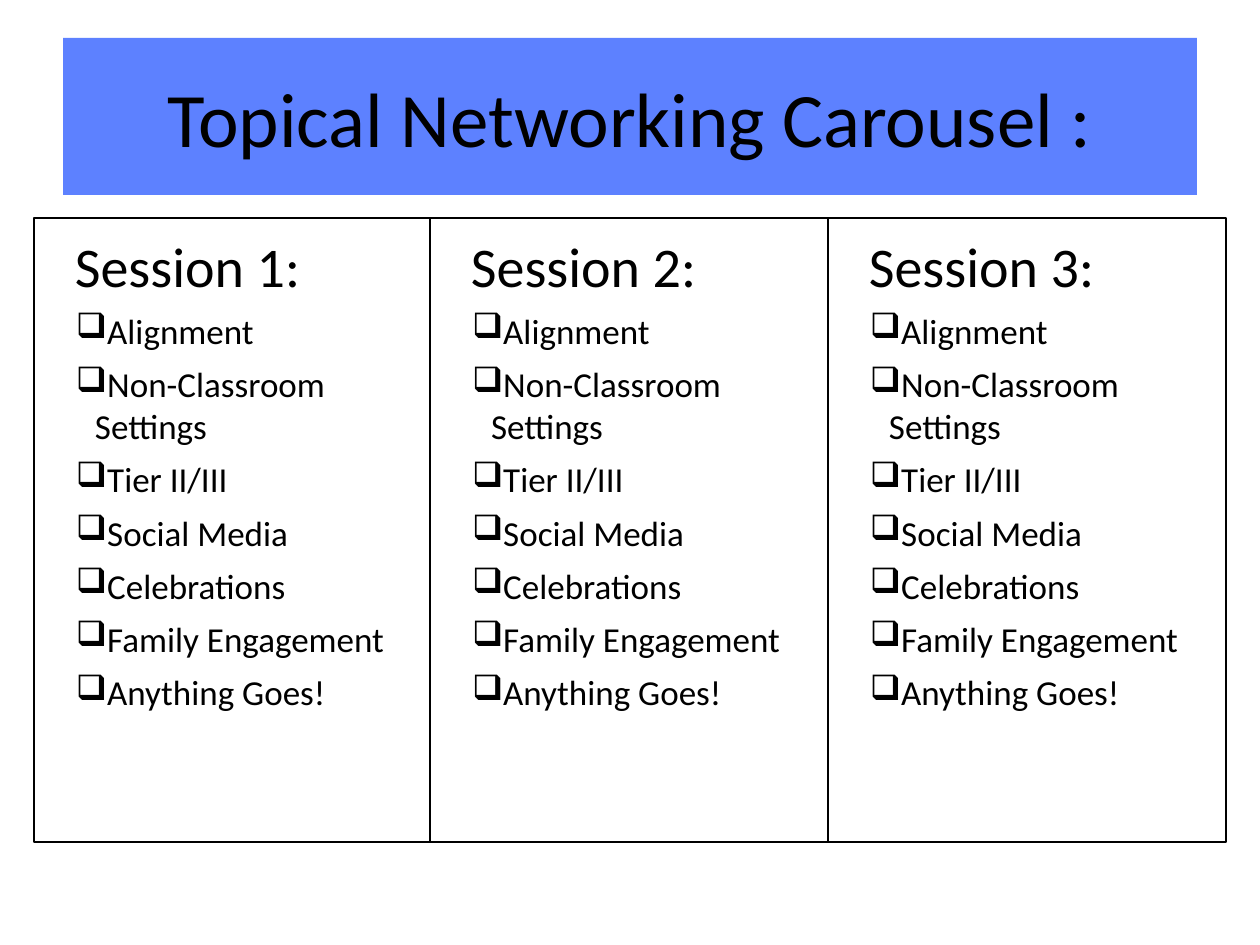
from lxml import etree
from pptx import Presentation
from pptx.dml.color import RGBColor
from pptx.enum.text import MSO_ANCHOR, PP_ALIGN
from pptx.oxml.ns import qn
from pptx.util import Pt

MIDDLE, TOP = MSO_ANCHOR.MIDDLE, MSO_ANCHOR.TOP
CENTER, LEFT = PP_ALIGN.CENTER, PP_ALIGN.LEFT
COLORS = {"banner": "5D81FF", "ink": "000000"}
FONT = "Calibri"
TITLE_ONLY = 5
INSET = 13
COLUMN_TOP, COLUMN_HEIGHT = 218, 624
COLUMN_WIDTHS = [396, 398, 398]
TOPICS = [
    "Alignment",
    "Non-Classroom Settings",
    "Tier II/III",
    "Social Media",
    "Celebrations",
    "Family Engagement",
    "Anything Goes!",
]


def px(value):
    return round(value * 914400 / 126)


def format_text(paragraph, size, alignment):
    paragraph.alignment = alignment
    paragraph.font.name = FONT
    paragraph.font.size = Pt(size)
    paragraph.font.color.rgb = RGBColor.from_string(COLORS["ink"])


presentation = Presentation()
presentation.slide_width, presentation.slide_height = px(1260), px(945)
slide = presentation.slides.add_slide(presentation.slide_layouts[TITLE_ONLY])

title = slide.shapes.title
title.left, title.top, title.width, title.height = px(63), px(38), px(1134), px(157)
title.fill.solid()
title.fill.fore_color.rgb = RGBColor.from_string(COLORS["banner"])
title.text_frame.text = "Topical Networking Carousel :"
title.text_frame.vertical_anchor = MIDDLE
format_text(title.text_frame.paragraphs[0], 44, CENTER)

left = 34
for number, width in enumerate(COLUMN_WIDTHS, start=1):
    column = slide.shapes.add_textbox(px(left), px(COLUMN_TOP), px(width), px(COLUMN_HEIGHT))
    left += width
    column.line.color.rgb = RGBColor.from_string(COLORS["ink"])
    column.line.width = Pt(0.75)

    frame = column.text_frame
    frame.word_wrap = True
    frame.vertical_anchor = TOP
    frame.margin_left = frame.margin_right = px(INSET)
    frame.margin_top = frame.margin_bottom = px(INSET)

    heading = frame.paragraphs[0]
    heading.text = f"Session {number}:"
    heading._p.get_or_add_pPr().set("marL", str(px(28)))
    format_text(heading, 32, LEFT)

    for topic in TOPICS:
        paragraph = frame.add_paragraph()
        paragraph.text = topic
        paragraph.space_before = Pt(6.4)
        properties = paragraph._p.get_or_add_pPr()
        properties.set("marL", str(px(48)))
        properties.set("indent", str(px(-19)))
        bullet_color = etree.SubElement(properties, qn("a:buClr"))
        etree.SubElement(bullet_color, qn("a:srgbClr"), val=COLORS["ink"])
        etree.SubElement(properties, qn("a:buChar"), char="❑")
        format_text(paragraph, 20, LEFT)

presentation.save("out.pptx")
